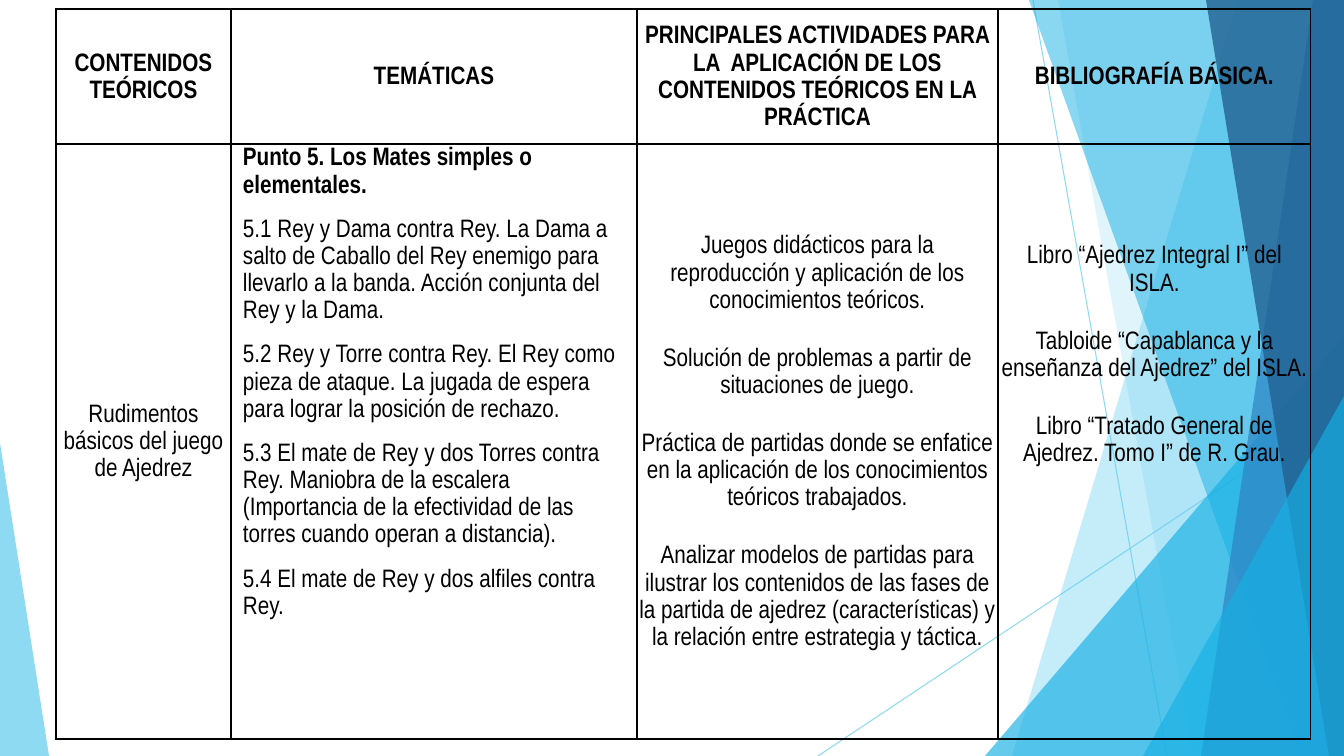
import pptx
import pptx.dml.color
import pptx.enum.shapes
import pptx.enum.text
import pptx.oxml
import pptx.oxml.ns
import pptx.util

WIDTH, HEIGHT = 1344, 756
EMU_PER_PX = 12192000 / WIDTH
FONT = "Arial Narrow"
BLACK = "000000"
SKY, AZURE, BLUE, NAVY = "5FCBEF", "17B0E4", "2E83C3", "226292"

# from x, from y, to x, to y
RAYS = [(1033, 0, 1167, 756), (1344, 406, 818, 756)]
# Back to front. Panel: x at top, x at bottom, reaching the right slide edge.
# Triangle: left, top, width, apex position; reaching the bottom slide edge.
FACETS = [
    ("panel", (1238, 1012), SKY, 36),
    ("panel", (1058, 1193), SKY, 20),
    ("triangle", (985, 336, 359, 1), AZURE, 66),
    ("panel", (1029, 1301), AZURE, 50),
    ("panel", (1313, 1201), BLUE, 70),
    ("panel", (1206, 1329), NAVY, 80),
    ("triangle", (1143, 396, 201, 1), AZURE, 66),
    ("triangle", (0, 443, 49, 0), SKY, 70),
]

TABLE_LEFT, TABLE_TOP = 56, 9
COLUMNS = [175, 406, 361, 313]
ROWS = [135, 595]
HEADERS = [
    "CONTENIDOS TEÓRICOS",
    "TEMÁTICAS",
    "PRINCIPALES ACTIVIDADES PARA LA  APLICACIÓN DE LOS CONTENIDOS TEÓRICOS EN LA PRÁCTICA",
    "BIBLIOGRAFÍA BÁSICA.",
]
CONTENTS = ["Rudimentos básicos del juego de Ajedrez"]
TOPICS = [
    "Punto 5. Los Mates simples o elementales.",
    "5.1 Rey y Dama contra Rey. La Dama a salto de Caballo del Rey enemigo para llevarlo a la banda. "
    "Acción conjunta del Rey y la Dama.",
    "5.2 Rey y Torre contra Rey. El Rey como pieza de ataque. La jugada de espera para lograr la "
    "posición de rechazo.",
    "5.3 El mate de Rey y dos Torres contra Rey. Maniobra de la escalera (Importancia de la "
    "efectividad de las torres cuando operan a distancia).",
    "5.4 El mate de Rey y dos alfiles contra Rey.",
]
ACTIVITIES = [
    "Juegos didácticos para la reproducción y aplicación de los conocimientos teóricos.",
    "Solución de problemas a partir de situaciones de juego.",
    "Práctica de partidas donde se enfatice en la aplicación de los conocimientos teóricos trabajados.",
    "Analizar modelos de partidas para ilustrar los contenidos de las fases de la partida de ajedrez "
    "(características) y la relación entre estrategia y táctica.",
]
BOOKS = [
    "Libro “Ajedrez Integral I” del ISLA.",
    "Tabloide “Capablanca y la enseñanza del Ajedrez” del ISLA.",
    "Libro “Tratado General de Ajedrez. Tomo I” de R. Grau.",
]
TOPIC_FORMAT = dict(align="LEFT", anchor="TOP", side=12, before=6, after=6)
BODY = [
    (CONTENTS, {}),
    (TOPICS, dict(TOPIC_FORMAT, bold_count=1)),
    (ACTIVITIES, {}),
    (BOOKS, dict(bottom=174)),
]


def px(length):
    return pptx.util.Emu(round(length * EMU_PER_PX))


def color(value):
    return pptx.dml.color.RGBColor.from_string(value)


def paint(fill, value, opacity):
    """Solid fill with an opacity in percent."""
    fill.solid()
    fill.fore_color.rgb = color(value)
    for node in fill._xPr.iter(pptx.oxml.ns.qn("a:srgbClr")):
        alpha = pptx.oxml.parse_xml(f'<a:alpha {pptx.oxml.ns.nsdecls("a")} val="{opacity * 1000}"/>')
        node.append(alpha)


def add_ray(slide, start_x, start_y, end_x, end_y):
    ray = slide.shapes.add_connector(
        pptx.enum.shapes.MSO_CONNECTOR.STRAIGHT, px(start_x), px(start_y), px(end_x), px(end_y))
    ray.line.width = pptx.util.Pt(0.75)
    paint(ray.line.fill, SKY, 70)
    ray._element.spPr.append(pptx.oxml.parse_xml(f'<a:effectLst {pptx.oxml.ns.nsdecls("a")}/>'))


def add_facet(slide, kind, place, value, opacity):
    if kind == "panel":
        top_x, bottom_x = place
        builder = slide.shapes.build_freeform(px(top_x), 0)
        corners = [(WIDTH, 0), (WIDTH, HEIGHT), (bottom_x, HEIGHT)]
        builder.add_line_segments([(px(x), px(y)) for x, y in corners], close=True)
        shape = builder.convert_to_shape()
    else:
        left, top, width, apex = place
        shape = slide.shapes.add_shape(
            pptx.enum.shapes.MSO_SHAPE.ISOSCELES_TRIANGLE, px(left), px(top), px(width), px(HEIGHT - top))
        shape.adjustments[0] = apex
    shape.shadow.inherit = False
    shape.line.fill.background()
    paint(shape.fill, value, opacity)


def outline(cell):
    """Thin black borders on all four sides, placed ahead of the cell fill."""
    properties = cell._tc.get_or_add_tcPr()
    for index, side in enumerate(("lnL", "lnR", "lnT", "lnB")):
        properties.insert(index, pptx.oxml.parse_xml(
            f'<a:{side} {pptx.oxml.ns.nsdecls("a")} w="12700"><a:solidFill>'
            f'<a:srgbClr val="{BLACK}"/></a:solidFill></a:{side}>'))


def write(cell, texts, align="CENTER", anchor="MIDDLE", side=2, bottom=0, before=12, after=10, bold_count=0):
    """Fill a cell with paragraphs, the first bold_count of them bold."""
    cell.margin_left = cell.margin_right = px(side)
    cell.margin_top, cell.margin_bottom = 0, px(bottom)
    cell.vertical_anchor = getattr(pptx.enum.text.MSO_ANCHOR, anchor)
    frame = cell.text_frame
    for index, text in enumerate(texts):
        paragraph = frame.add_paragraph() if index else frame.paragraphs[0]
        paragraph.alignment = getattr(pptx.enum.text.PP_ALIGN, align)
        paragraph.line_spacing = 1.15
        paragraph.space_before = pptx.util.Pt(before)
        paragraph.space_after = pptx.util.Pt(after)
        run = paragraph.add_run()
        run.text = text
        run.font.name = FONT
        run.font.size = pptx.util.Pt(18)
        run.font.bold = index < bold_count
        run.font.color.rgb = color(BLACK)


def add_program_table(slide):
    table = slide.shapes.add_table(
        len(ROWS), len(COLUMNS), px(TABLE_LEFT), px(TABLE_TOP), px(sum(COLUMNS)), px(sum(ROWS))).table
    table.first_row = table.horz_banding = False
    for column, width in zip(table.columns, COLUMNS):
        column.width = px(width)
    for row, height in zip(table.rows, ROWS):
        row.height = px(height)
    header_row = [([header], dict(bold_count=1)) for header in HEADERS]
    for row, entries in zip(table.rows, (header_row, BODY)):
        for cell, (texts, text_format) in zip(row.cells, entries):
            cell.fill.background()
            outline(cell)
            write(cell, texts, **text_format)


def main():
    presentation = pptx.Presentation()
    presentation.slide_width, presentation.slide_height = px(WIDTH), px(HEIGHT)
    slide = presentation.slides.add_slide(presentation.slide_layouts[6])
    for ray in RAYS:
        add_ray(slide, *ray)
    for facet in FACETS:
        add_facet(slide, *facet)
    add_program_table(slide)
    presentation.save("out.pptx")


if __name__ == "__main__":
    main()
